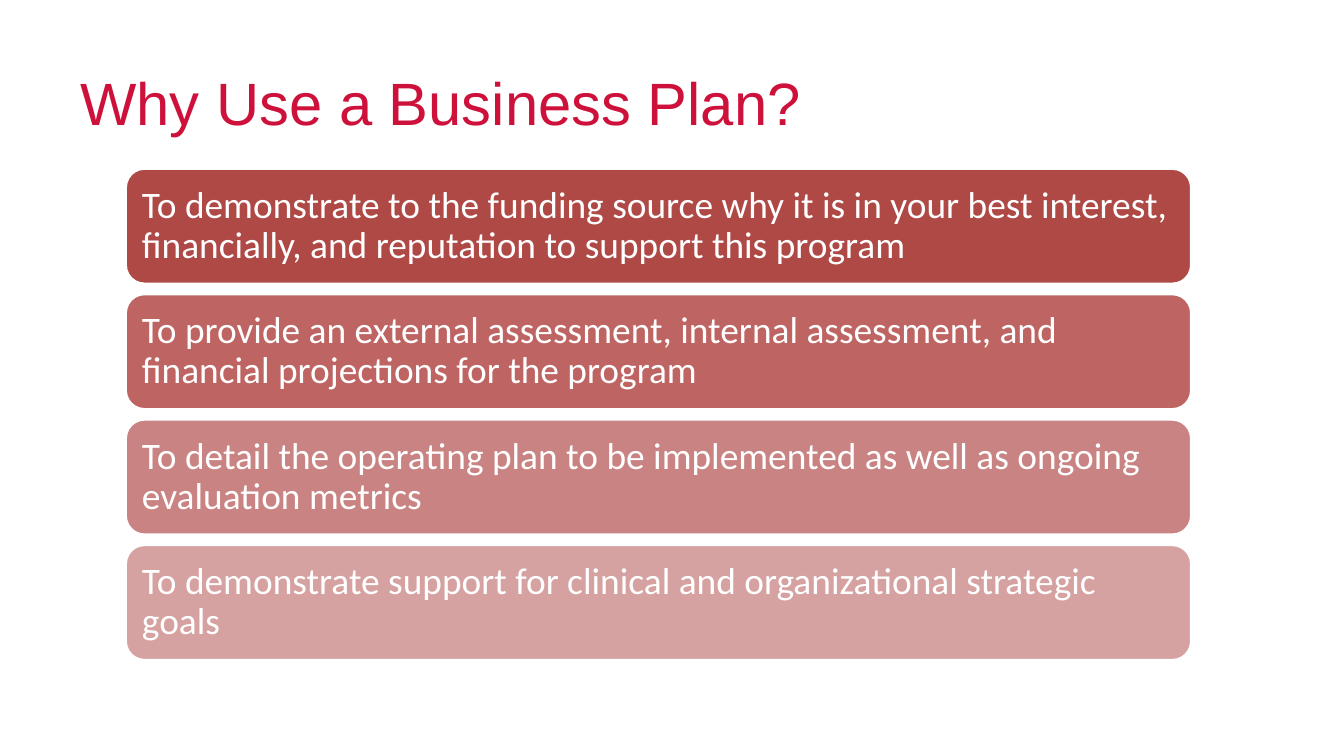
from dataclasses import dataclass

from pptx import Presentation
from pptx.dml.color import RGBColor
from pptx.enum.shapes import MSO_SHAPE
from pptx.enum.text import MSO_ANCHOR, PP_ALIGN
from pptx.util import Pt


@dataclass(frozen=True)
class Theme:
    title_color: str = "CD113B"
    light: str = "FFFFFF"
    title_font: str = "Arial"
    body_font: str = "Calibri"
    title_size: float = 32
    body_size: float = 20


@dataclass(frozen=True)
class Box:
    left: float
    top: float
    width: float
    height: float

    def lengths(self):
        return Pt(self.left), Pt(self.top), Pt(self.width), Pt(self.height)


THEME = Theme()
REASONS = [
    ("To demonstrate to the funding source why it is in your best interest, "
     "financially, and reputation to support this program", "AE4946"),
    ("To provide an external assessment, internal assessment, and "
     "financial projections for the program", "BE6462"),
    ("To detail the operating plan to be implemented as well as ongoing "
     "evaluation metrics", "C98382"),
    ("To demonstrate support for clinical and organizational strategic goals",
     "D6A2A1"),
]


def write_text(shape, text, *, font, size, color, anchor, insets, line_spacing=1.0):
    frame = shape.text_frame
    frame.word_wrap = True
    frame.vertical_anchor = anchor
    (frame.margin_left, frame.margin_top,
     frame.margin_right, frame.margin_bottom) = map(Pt, insets)
    para = frame.paragraphs[0]
    para.alignment = PP_ALIGN.LEFT
    para.line_spacing = line_spacing
    span = para.add_run()
    span.text = text
    span.font.name = font
    span.font.size = Pt(size)
    span.font.color.rgb = RGBColor.from_string(color)


def add_title(page, box, text):
    title = page.shapes.add_textbox(*box.lengths())
    write_text(title, text, font=THEME.title_font, size=THEME.title_size,
               color=THEME.title_color, anchor=MSO_ANCHOR.TOP,
               insets=(7.2, 6.5, 7.2, 0))


def add_reasons(page, box, reasons, gap):
    height = (box.height - gap * (len(reasons) - 1)) / len(reasons)
    for index, (text, fill) in enumerate(reasons):
        bar_box = Box(box.left, box.top + index * (height + gap), box.width, height)
        bar = page.shapes.add_shape(MSO_SHAPE.ROUNDED_RECTANGLE, *bar_box.lengths())
        bar.shadow.inherit = False
        bar.fill.solid()
        bar.fill.fore_color.rgb = RGBColor.from_string(fill)
        bar.line.color.rgb = RGBColor.from_string(THEME.light)
        bar.line.width = Pt(2)
        write_text(bar, text, font=THEME.body_font, size=THEME.body_size,
                   color=THEME.light, anchor=MSO_ANCHOR.MIDDLE,
                   insets=(6, 6, 6, 6), line_spacing=0.9)


def main():
    deck = Presentation()
    deck.slide_width, deck.slide_height = Pt(720), Pt(405)
    page = deck.slides.add_slide(deck.slide_layouts[6])
    add_title(page, Box(36, 29, 648, 43.5), "Why Use a Business Plan?")
    add_reasons(page, Box(67, 90, 571.5, 264), REASONS, gap=4.8)
    deck.save("out.pptx")


if __name__ == "__main__":
    main()
